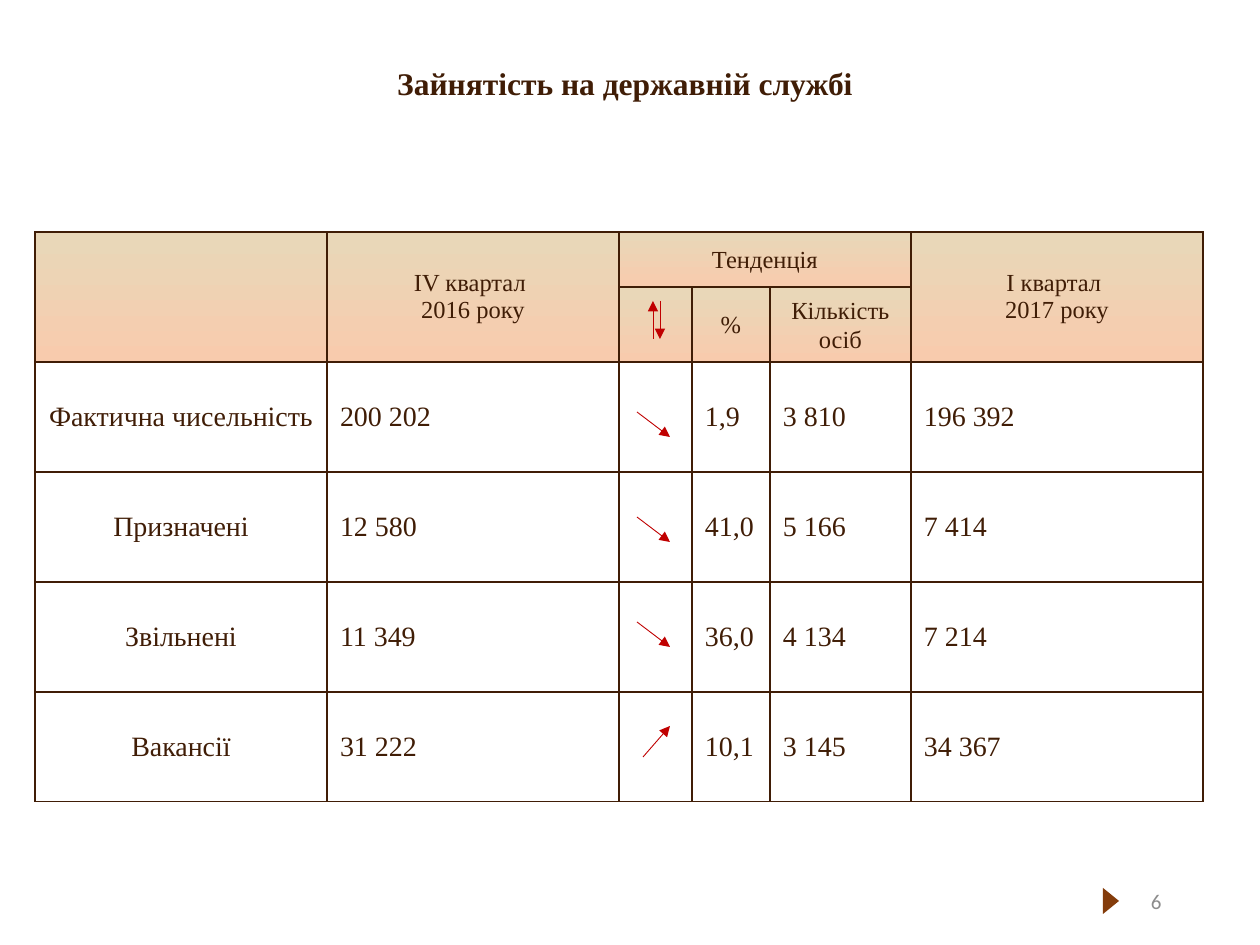
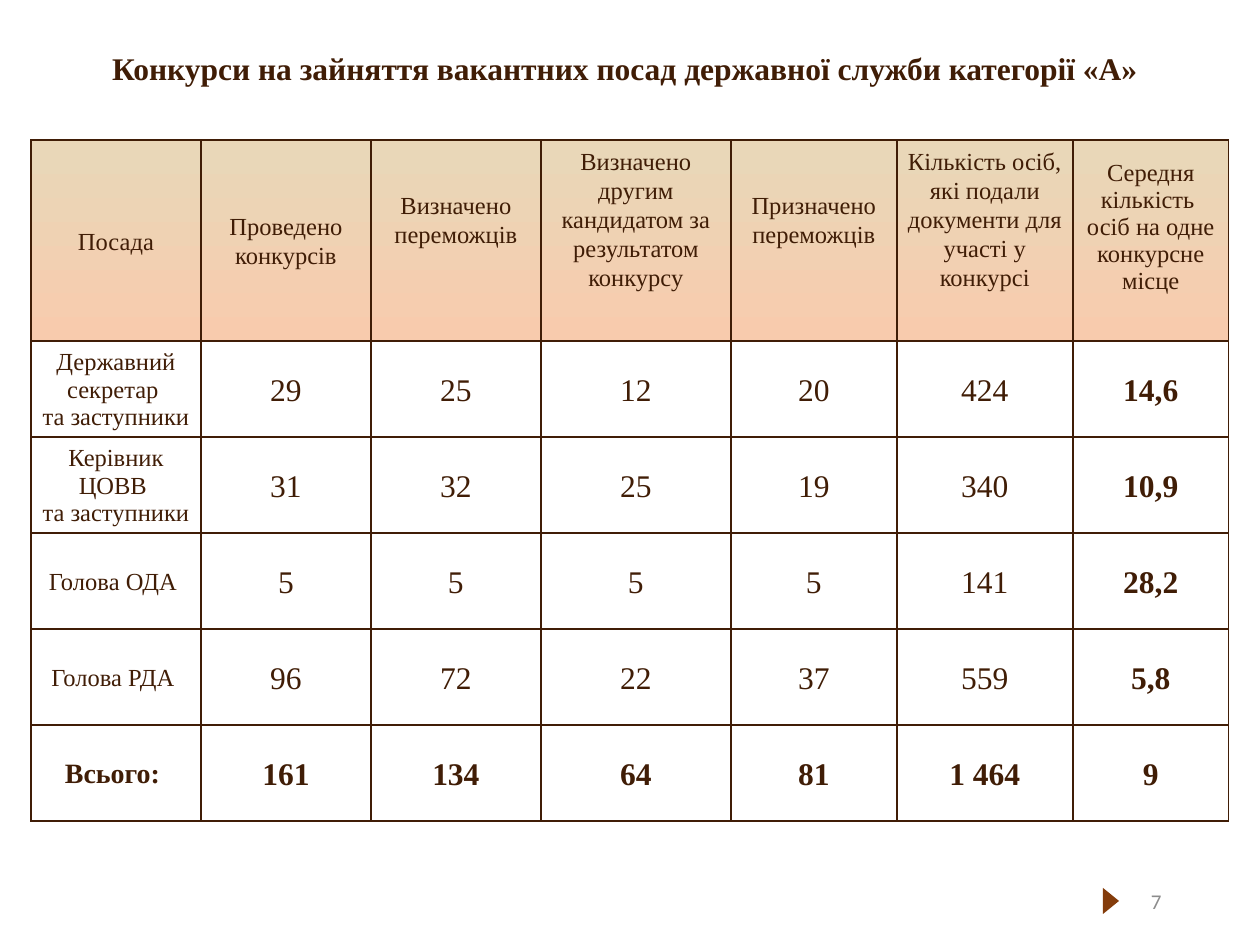
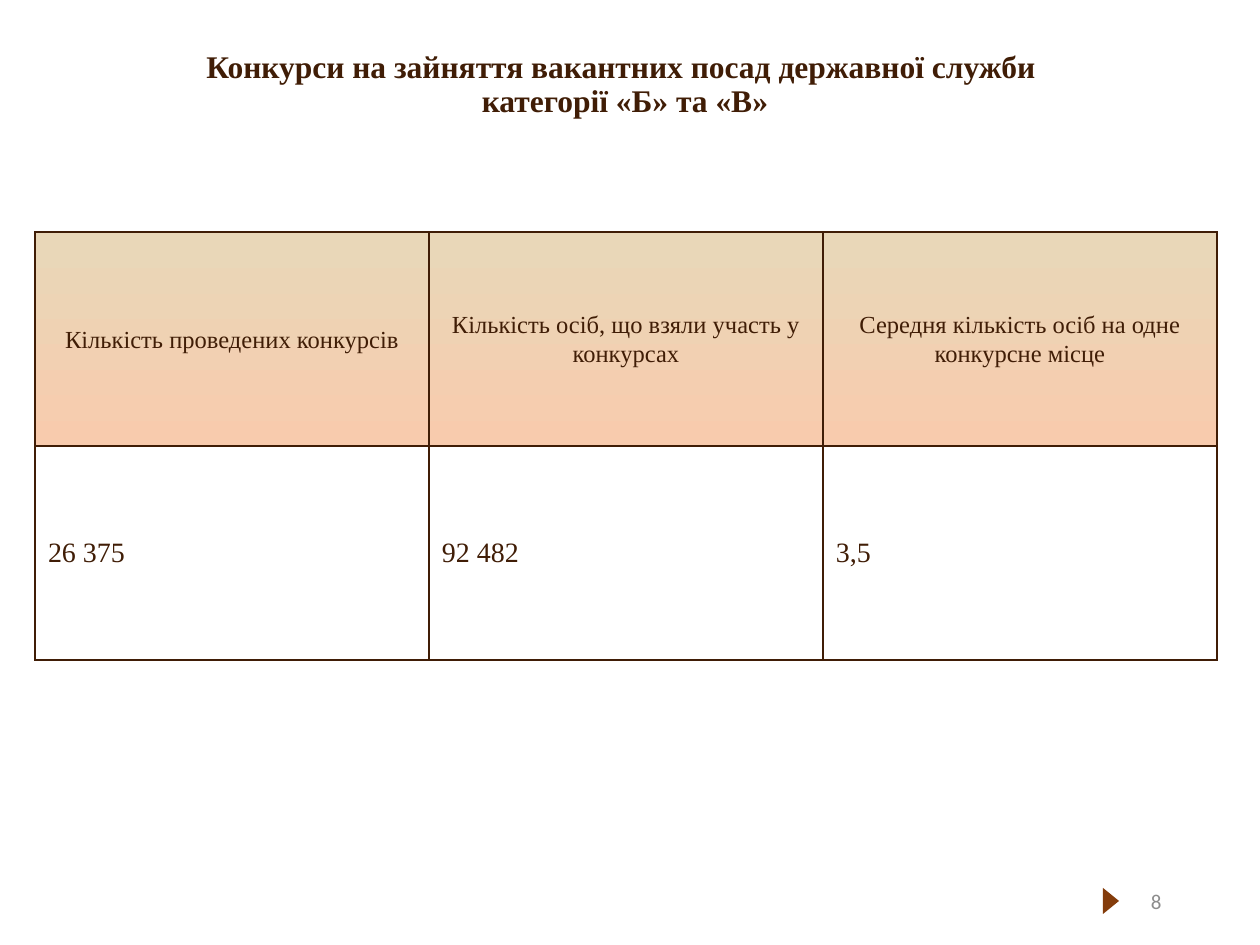
from copy import deepcopy

from lxml import etree
from pptx import Presentation
from pptx.dml.color import RGBColor
from pptx.enum.shapes import MSO_CONNECTOR, MSO_SHAPE
from pptx.enum.text import MSO_ANCHOR, PP_ALIGN
from pptx.oxml.ns import qn
from pptx.util import Emu, Pt

# Shared style
PX_PER_INCH = 126
SERIF, SANS = "Times New Roman", "Calibri"
BROWN = RGBColor(0x40, 0x1D, 0x06)
RUST = RGBColor(0x84, 0x3C, 0x0B)
GREY = RGBColor(0x8C, 0x8C, 0x8C)
RED = RGBColor(0xC0, 0x00, 0x00)
SAND = RGBColor(0xE9, 0xD7, 0xB8)
PEACH = RGBColor(0xF8, 0xCB, 0xAD)
LEFT, CENTER, RIGHT = PP_ALIGN.LEFT, PP_ALIGN.CENTER, PP_ALIGN.RIGHT
MIDDLE = MSO_ANCHOR.MIDDLE
STRAIGHT, TRIANGLE = MSO_CONNECTOR.STRAIGHT, MSO_SHAPE.ISOSCELES_TRIANGLE
CELL_MARGINS = (13, 6, 13, 6)
LOOSE = {"spacing": 1.07, "after": 8}


def px(length):
    return Emu(round(length * 914400 / PX_PER_INCH))


def write(frame, text, size=14, bold=False, color=BROWN, font=SERIF,
          align=CENTER, spacing=None, after=None):
    """Fill a frame; a list gives paragraphs, a newline gives a line break."""
    frame.word_wrap = True
    for i, words in enumerate([text] if isinstance(text, str) else text):
        paragraph = frame.add_paragraph() if i else frame.paragraphs[0]
        paragraph.text = words
        paragraph.alignment = align
        if spacing:
            paragraph.line_spacing = spacing
        if after:
            paragraph.space_after = Pt(after)
        for run in paragraph.runs:
            run.font.size, run.font.bold = Pt(size), bold
            run.font.name, run.font.color.rgb = font, color
        for line_break in paragraph._p.findall(qn("a:br")):
            line_break.insert(0, deepcopy(paragraph.runs[0]._r.rPr))


class Deck:
    def __init__(self):
        self.prs = Presentation()
        self.prs.slide_width, self.prs.slide_height = px(1260), px(945)
        self.slide = None

    def new_slide(self, number, title, title_top=50, title_height=71):
        self.slide = self.prs.slides.add_slide(self.prs.slide_layouts[6])
        self.marker()
        self.text(87, title_top, 1076, title_height, title,
                  size=18, bold=True, spacing=0.9)
        self.text(890, 876, 284, 50, str(number),
                  size=12, color=GREY, font=SANS, align=RIGHT)

    def marker(self):
        marker = self.slide.shapes.add_shape(
            TRIANGLE, px(1098), px(893), px(26), px(16))
        marker.rotation = 90
        marker.shadow.inherit = False
        marker.fill.solid()
        marker.fill.fore_color.rgb = RUST
        marker.line.fill.background()

    def text(self, left, top, width, height, text, **style):
        box = self.slide.shapes.add_textbox(
            px(left), px(top), px(width), px(height))
        box.text_frame.vertical_anchor = MIDDLE
        write(box.text_frame, text, **style)

    def arrow(self, *ends):
        arrow = self.slide.shapes.add_connector(STRAIGHT, *map(px, ends))
        arrow.line.color.rgb = RED
        arrow.line.width = Pt(0.5)
        etree.SubElement(arrow.line._get_or_add_ln(), qn("a:tailEnd"),
                         type="triangle")
        etree.SubElement(arrow._element.spPr, qn("a:effectLst"))

    def table(self, left, top, widths, heights, rows, style,
              header_rows=1, merges=()):
        """Draw rows of text; style(row, column) gives the cell's format."""
        table = self.slide.shapes.add_table(
            len(rows), len(widths), px(left), px(top),
            px(sum(widths)), px(sum(heights))).table
        table.first_row = table.horz_banding = False
        for column, width in zip(table.columns, widths):
            column.width = px(width)
        for row, height in zip(table.rows, heights):
            row.height = px(height)
        for r, row in enumerate(rows):
            for c, text in enumerate(row):
                self.cell(table.cell(r, c), text, r < header_rows, **style(r, c))
        for start, end in merges:
            table.cell(*start).merge(table.cell(*end))

    def cell(self, cell, text, header, margins=CELL_MARGINS, **style):
        self.borders(cell)
        if header:
            cell.fill.gradient()
            cell.fill.gradient_angle = 270
            for stop, color, position in zip(
                    cell.fill.gradient_stops, (SAND, PEACH), (0.05, 1)):
                stop.color.rgb, stop.position = color, position
        else:
            cell.fill.background()
        cell.vertical_anchor = MIDDLE
        (cell.margin_left, cell.margin_top,
         cell.margin_right, cell.margin_bottom) = map(px, margins)
        if text:
            write(cell.text_frame, text, **style)

    def borders(self, cell):
        properties = cell._tc.get_or_add_tcPr()
        for side in ("a:lnL", "a:lnR", "a:lnT", "a:lnB"):
            line = etree.SubElement(properties, qn(side), w=str(Pt(1)))
            fill = etree.SubElement(line, qn("a:solidFill"))
            etree.SubElement(fill, qn("a:srgbClr"), val=str(BROWN))


def employment(deck):
    deck.new_slide(6, "Зайнятість на державній службі")

    def style(r, c):
        if r < 2:
            return LOOSE if 2 <= c <= 4 else {}
        return {"size": 16, "align": LEFT if c else CENTER}

    rows = [
        ["", ["IV квартал ", "2016 року"], "Тенденція", "", "",
         ["I квартал ", "2017 року"]],
        ["", "", "", "%", "Кількість осіб", ""],
        ["Фактична чисельність", "200 202", "", "1,9", "3 810", "196 392"],
        ["Призначені", "12 580", "", "41,0", "5 166", "7 414"],
        ["Звільнені", "11 349", "", "36,0", "4 134", "7 214"],
        ["Вакансії", "31 222", "", "10,1", "3 145", "34 367"],
    ]
    two_row_headings = [((0, c), (1, c)) for c in (0, 1, 5)]
    deck.table(35, 232, [292, 292, 73, 78, 141, 292], [55, 70] + [110] * 4,
               rows, style, header_rows=2,
               merges=two_row_headings + [((0, 2), (0, 4))])

    # Trend arrows: three falls, one rise, and the heading's pair
    for fall_top in range(412, 623, 105):
        deck.arrow(637, fall_top, 670, fall_top + 25)
    deck.arrow(643, 757, 670, 726)
    deck.arrow(653, 339, 653, 301)
    deck.arrow(660, 301, 660, 339)


def category_a(deck):
    deck.new_slide(7, "Конкурси на зайняття вакантних посад державної служби "
                      "категорії «А»", title_top=19, title_height=102)
    side_margins = [8, 8, 1, 1, 8, 1, 0]
    heading_lifts = [0, 0, 43, 43, 43, 43, 28]
    total_row, average_column = 5, 6

    def style(r, c):
        if r == 0:
            spacing = {} if c == average_column else LOOSE
            return {"margins": (8, 1, 8, heading_lifts[c]), **spacing}
        if (r, c) == (total_row, 0):
            return {"size": 16, "bold": True, **LOOSE}
        side = side_margins[c]
        margins = (side, min(side, 1), side, 0)
        if c == 0:
            return {"margins": margins, **(LOOSE if r > 2 else {})}
        return {"margins": margins, "size": 18,
                "bold": r == total_row or c == average_column, **LOOSE}

    rows = [
        ["Посада", "Проведено конкурсів", "Визначено переможців",
         "Визначено другим кандидатом за результатом конкурсу",
         "Призначено переможців",
         "Кількість осіб, які подали документи для участі у конкурсі",
         ["Середня кількість ", "осіб на одне конкурсне місце"]],
        ["Державний секретар \nта заступники",
         "29", "25", "12", "20", "424", "14,6"],
        [["Керівник ЦОВВ ", "та заступники"],
         "31", "32", "25", "19", "340", "10,9"],
        ["Голова ОДА ", "5", "5", "5", "5", "141", "28,2"],
        ["Голова РДА ", "96", "72", "22", "37", "559", "5,8"],
        ["Всього: ", "161", "134", "64", "81", "1 464", "9"],
    ]
    deck.table(31, 140, [170, 170, 170, 190, 166, 176, 156],
               [189] + [96] * 5, rows, style)


def categories_b_and_c(deck):
    deck.new_slide(8, "Конкурси на зайняття вакантних посад державної служби "
                      "\nкатегорії «Б» та «В»")

    def style(r, c):
        return {"size": 16, "align": LEFT} if r else LOOSE

    rows = [
        ["Кількість проведених конкурсів",
         "Кількість осіб, що взяли участь у конкурсах",
         "Середня кількість осіб на одне конкурсне місце"],
        ["26 375", "92 482", "3,5"],
    ]
    deck.table(35, 232, [394] * 3, [214] * 2, rows, style)


def main():
    deck = Deck()
    employment(deck)
    category_a(deck)
    categories_b_and_c(deck)
    deck.prs.save("out.pptx")


if __name__ == "__main__":
    main()
